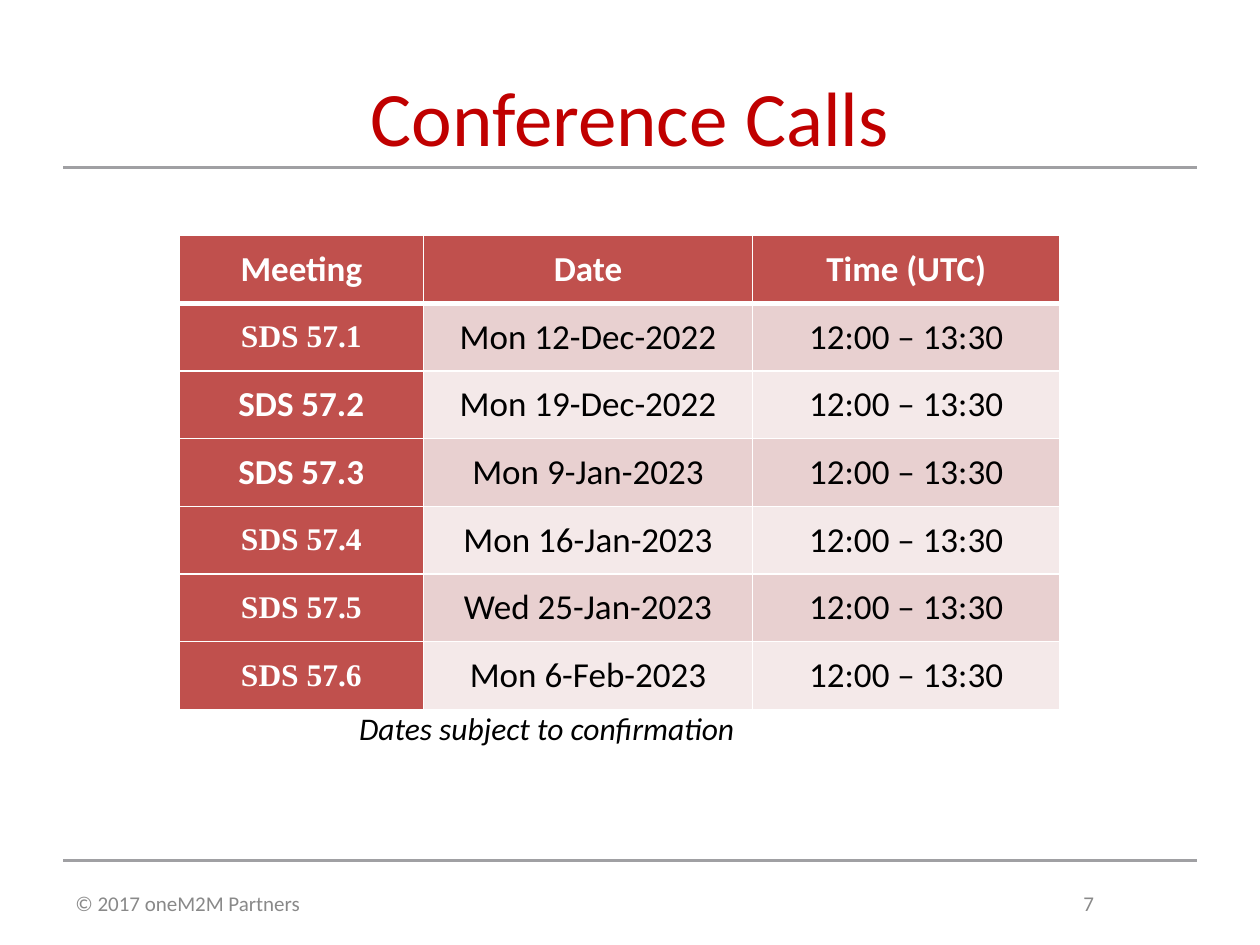
from lxml.etree import SubElement
from pptx import Presentation
from pptx.dml.color import RGBColor
from pptx.enum.shapes import MSO_CONNECTOR
from pptx.enum.text import MSO_ANCHOR, MSO_AUTO_SIZE, PP_ALIGN
from pptx.oxml.ns import qn
from pptx.util import Cm, Pt

TITLE = "Conference Calls"
HEADER = ("Meeting", "Date", "Time (UTC)")
TIME = "12:00 – 13:30"
SERIF, SANS = "Times New Roman", "Calibri"
CALLS = [
    ("SDS 57.1", "Mon 12-Dec-2022", SERIF),
    ("SDS 57.2", "Mon 19-Dec-2022", SANS),
    ("SDS 57.3", "Mon 9-Jan-2023", SANS),
    ("SDS 57.4", "Mon 16-Jan-2023", SERIF),
    ("SDS 57.5", "Wed 25-Jan-2023", SERIF),
    ("SDS 57.6", "Mon 6-Feb-2023", SERIF),
]
NOTE = "Dates subject to confirmation"
FOOTER = "© 2017 oneM2M Partners\t7"

WHITE = RGBColor(0xFF, 0xFF, 0xFF)
BLACK = RGBColor(0x00, 0x00, 0x00)
TITLE_RED = RGBColor(0xC0, 0x00, 0x00)
TABLE_RED = RGBColor(0xC0, 0x50, 0x4D)
BANDS = (RGBColor(0xE8, 0xD0, 0xD0), RGBColor(0xF4, 0xE9, 0xE9))
RULE_GREY = RGBColor(0xA0, 0xA0, 0xA3)
FOOTER_GREY = RGBColor(0x89, 0x89, 0x89)

MARGIN, CONTENT_WIDTH = 1.27, 22.86
RULE_TOPS = (3.38, 17.35)
COLUMN_WIDTHS = (4.93, 6.63, 6.2)
ROW_HEIGHT = 9.55 / 7


def write(frame, text, size, color, font=SANS, bold=False, italic=False,
          align=PP_ALIGN.LEFT, anchor=MSO_ANCHOR.TOP, tab=None):
    frame.vertical_anchor = anchor
    paragraph = frame.paragraphs[0]
    paragraph.alignment = align
    if tab:
        tabs = SubElement(paragraph._p.get_or_add_pPr(), qn("a:tabLst"))
        SubElement(tabs, qn("a:tab"), pos=str(Cm(tab)), algn="l")
    run = paragraph.add_run()
    run.text = text
    run.font.name = font
    run.font.size = Pt(size)
    run.font.bold = bold
    run.font.italic = italic
    run.font.color.rgb = color


def add_rule(slide, top):
    rule = slide.shapes.add_connector(
        MSO_CONNECTOR.STRAIGHT, Cm(MARGIN), Cm(top), Cm(MARGIN + CONTENT_WIDTH), Cm(top))
    rule.line.color.rgb = RULE_GREY
    rule.line.width = Pt(1.75)
    SubElement(rule._element.spPr, qn("a:effectLst"))


def add_text_box(slide, left, top, width, height):
    frame = slide.shapes.add_textbox(Cm(left), Cm(top), Cm(width), Cm(height)).text_frame
    frame.word_wrap = True
    return frame


def set_borders(cell, **widths):
    properties = cell._tc.get_or_add_tcPr()
    for side in "LRTB":
        line = SubElement(properties, qn(f"a:ln{side}"), w=str(Pt(widths.get(side, 1))))
        SubElement(SubElement(line, qn("a:solidFill")), qn("a:srgbClr"), val=str(WHITE))


def fill_cell(cell, text, fill, borders, **text_format):
    cell.margin_left = cell.margin_right = Cm(0.18)
    cell.margin_top = cell.margin_bottom = 0
    set_borders(cell, **borders)
    cell.fill.solid()
    cell.fill.fore_color.rgb = fill
    write(cell.text_frame, text, align=PP_ALIGN.CENTER, **text_format)
    cell.vertical_anchor = MSO_ANCHOR.MIDDLE


def add_call_table(slide):
    row_count = len(CALLS) + 1
    table = slide.shapes.add_table(
        row_count, len(HEADER), Cm(3.61), Cm(4.75),
        Cm(sum(COLUMN_WIDTHS)), Cm(ROW_HEIGHT * row_count)).table
    for column, width in zip(table.columns, COLUMN_WIDTHS):
        column.width = Cm(width)
    for row in table.rows:
        row.height = Cm(ROW_HEIGHT)

    heading = dict(color=WHITE, bold=True)
    for column, text in enumerate(HEADER):
        fill_cell(table.cell(0, column), text, TABLE_RED, {"B": 3}, size=20, **heading)
    for row, (meeting, date, font) in enumerate(CALLS, start=1):
        borders = {"T": 3} if row == 1 else {}
        fill_cell(table.cell(row, 0), meeting, TABLE_RED, borders,
                  size=18 if font == SERIF else 20, font=font, **heading)
        for column, text in enumerate((date, TIME), start=1):
            fill_cell(table.cell(row, column), text, BANDS[(row - 1) % 2], borders,
                      size=20, color=BLACK)


def main():
    presentation = Presentation()
    presentation.slide_width, presentation.slide_height = Cm(25.4), Cm(19.05)
    slide = presentation.slides.add_slide(presentation.slide_layouts[5])

    for top in RULE_TOPS:
        add_rule(slide, top)

    title = slide.shapes.title
    title.left, title.top = Cm(MARGIN), Cm(1.27)
    title.width, title.height = Cm(CONTENT_WIDTH), Cm(3.18)
    write(title.text_frame, TITLE, 44, TITLE_RED, align=PP_ALIGN.CENTER)

    footer = add_text_box(slide, MARGIN, RULE_TOPS[1], CONTENT_WIDTH, 1.7)
    write(footer, FOOTER, 12, FOOTER_GREY, anchor=MSO_ANCHOR.MIDDLE, tab=20.32)

    add_call_table(slide)

    note = add_text_box(slide, 6.99, 14.17, 8.26, 1.02)
    note.word_wrap = False
    note.auto_size = MSO_AUTO_SIZE.SHAPE_TO_FIT_TEXT
    write(note, NOTE, 18, BLACK, italic=True)

    presentation.save("out.pptx")


if __name__ == "__main__":
    main()
